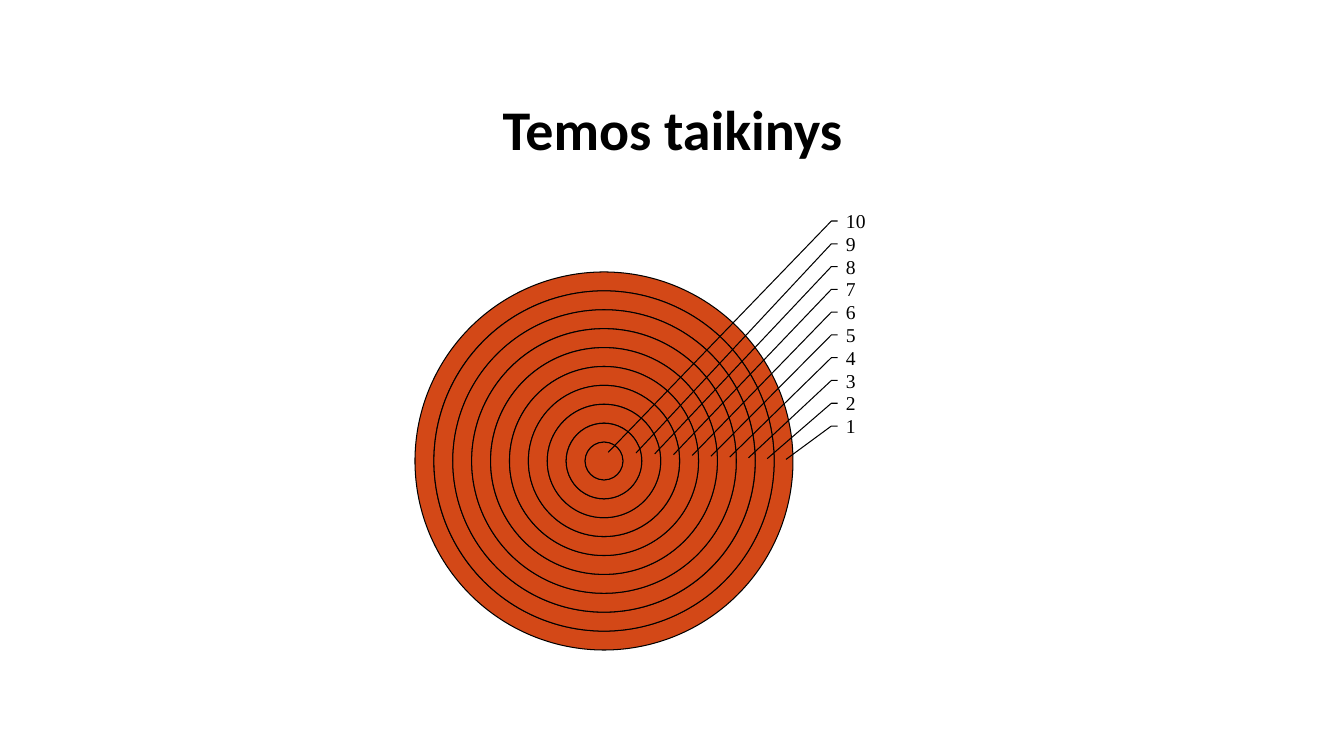
from pptx import Presentation
from pptx.dml.color import RGBColor
from pptx.enum.shapes import MSO_SHAPE
from pptx.enum.text import MSO_ANCHOR, PP_ALIGN
from pptx.util import Emu, Pt

DONUT = MSO_SHAPE.DONUT
OVAL = MSO_SHAPE.OVAL
CALLOUT = MSO_SHAPE.LINE_CALLOUT_2_NO_BORDER
TOP, BOTTOM = MSO_ANCHOR.TOP, MSO_ANCHOR.BOTTOM
LEFT, CENTER = PP_ALIGN.LEFT, PP_ALIGN.CENTER

BLACK = RGBColor(0x00, 0x00, 0x00)
ORANGE = RGBColor(0xD3, 0x48, 0x17)

# Target geometry in px
SCORES = 10
CENTER_X, CENTER_Y = 604, 461
TARGET_DIAMETER = 378
LABEL_LEFT, LABEL_WIDTH, LABEL_HEIGHT = 846, 75, 22
FIRST_LABEL_TOP, LAST_LABEL_TOP = 414, 209


def px(length):
    return Emu(round(length * 914400 / 100.8))


def write_text(shape, text, font, size, alignment, anchor, insets, bold=False):
    frame = shape.text_frame
    frame.vertical_anchor = anchor
    frame.margin_left, frame.margin_top, frame.margin_right, frame.margin_bottom = map(px, insets)
    paragraph = frame.paragraphs[0]
    paragraph.alignment = alignment
    run = paragraph.add_run()
    run.text = text
    run.font.name = font
    run.font.size = Pt(size)
    run.font.bold = bold
    run.font.color.rgb = BLACK


def add_outlined(group, kind, left, top, width, height):
    shape = group.shapes.add_shape(kind, px(left), px(top), px(width), px(height))
    shape.shadow.inherit = False
    shape.line.color.rgb = BLACK
    shape.line.width = Pt(0.75)
    return shape


def add_title(slide, text):
    title = slide.shapes.add_textbox(px(219), px(80), px(907), px(92))
    title.text_frame.word_wrap = True
    write_text(title, text, "Calibri", 40, CENTER, BOTTOM, (10, 5, 10, 10), bold=True)


def add_ring(group, score):
    position = SCORES + 1 - score  # 1 is the bullseye
    diameter = TARGET_DIAMETER * position / SCORES
    ring = add_outlined(group, OVAL if position == 1 else DONUT,
                        CENTER_X - diameter / 2, CENTER_Y - diameter / 2,
                        diameter, diameter)
    ring.fill.solid()
    ring.fill.fore_color.rgb = ORANGE
    if position > 1:
        ring.adjustments[0] = 0.5 / position


def add_score_label(group, score):
    step = (LAST_LABEL_TOP - FIRST_LABEL_TOP) / (SCORES - 1)
    label = add_outlined(group, CALLOUT, LABEL_LEFT, FIRST_LABEL_TOP + (score - 1) * step,
                         LABEL_WIDTH, LABEL_HEIGHT)
    label.fill.background()
    # Leader: start, elbow and tip as y, x fractions of the label
    tip_x = -3.17 if score == SCORES else -0.55 - 0.25 * score
    leader = (0.55, -0.11, 0.55, -0.195, 1.07 + score, tip_x)
    for index, value in enumerate(leader):
        label.adjustments[index] = value
    label.text_frame.word_wrap = False
    write_text(label, str(score), "Times New Roman", 14, LEFT, TOP, (0, 0, 0, 0))


def main():
    presentation = Presentation()
    presentation.slide_width, presentation.slide_height = px(1344), px(756)
    slide = presentation.slides.add_slide(presentation.slide_layouts[6])

    add_title(slide, "Temos taikinys")

    # Target, from the outer ring inwards
    target = slide.shapes.add_group_shape()
    for score in range(1, SCORES + 1):
        add_ring(target, score)
        add_score_label(target, score)

    presentation.save("out.pptx")


if __name__ == "__main__":
    main()
